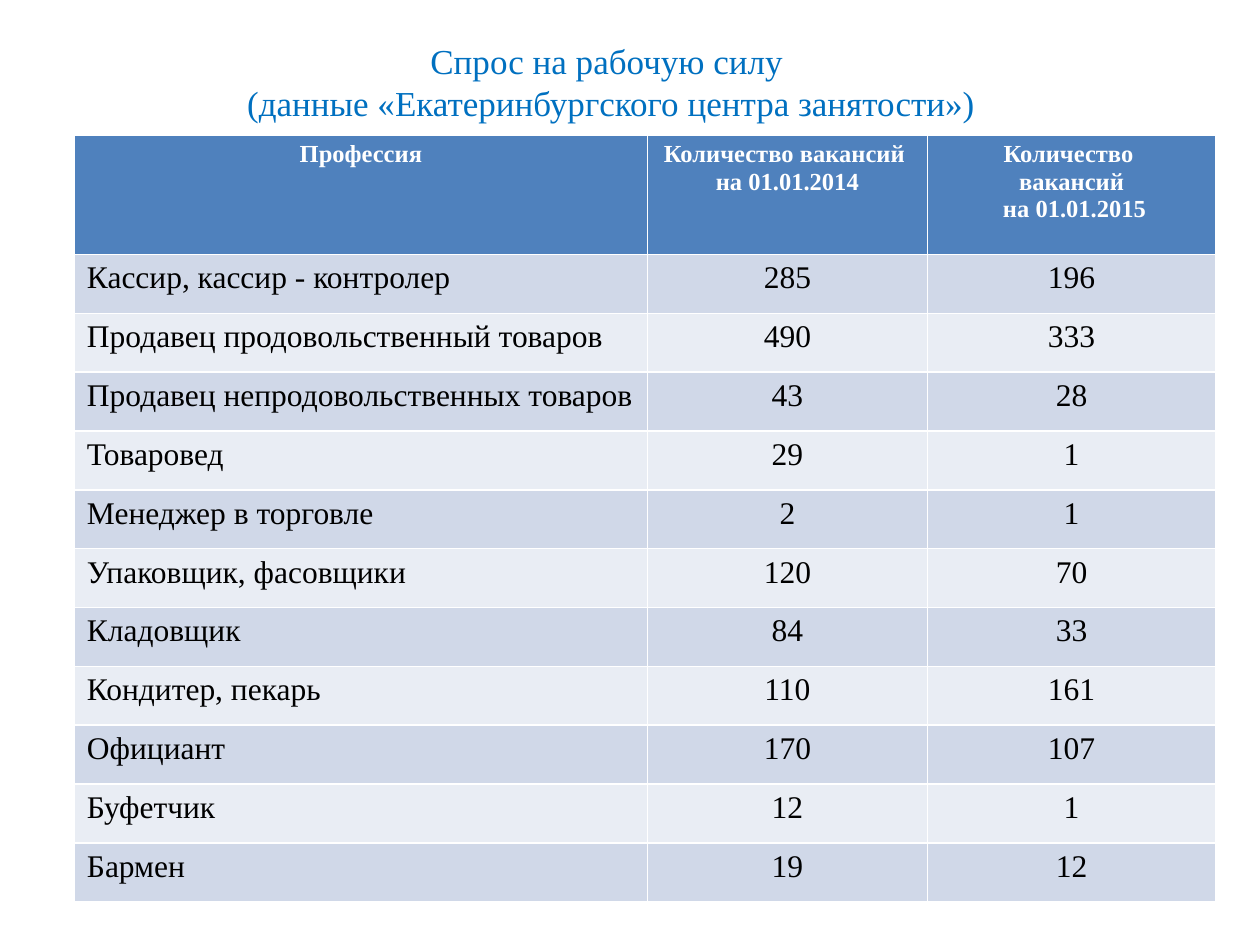
from dataclasses import dataclass

from pptx import Presentation
from pptx.dml.color import RGBColor
from pptx.enum.text import MSO_ANCHOR, PP_ALIGN
from pptx.util import Inches, Pt


@dataclass(frozen=True)
class Theme:
    face: str = "Times New Roman"
    title: str = "0070C0"
    head: str = "4F81BD"
    light: str = "FFFFFF"
    ink: str = "000000"
    bands: tuple = ("D0D8E8", "E9EDF4")
    title_size: int = 20
    head_size: int = 14
    body_size: int = 18


class Page:
    """Hold the theme and current slide; lengths are shares of the slide's size."""

    def __init__(self, deck, theme):
        self.deck, self.theme = deck, theme
        self.slide = deck.slides.add_slide(deck.slide_layouts[5])

    def box(self, left, top, width, height):
        wide, high = self.deck.slide_width, self.deck.slide_height
        return int(left * wide), int(top * high), int(width * wide), int(height * high)

    def label(self, frame, text, size, color, align, bold=False):
        frame.text = text
        for line in frame.paragraphs:
            line.alignment = align
            line.font.name = self.theme.face
            line.font.size = Pt(size)
            line.font.bold = bold
            line.font.color.rgb = RGBColor.from_string(color)

    def title(self, text, *place):
        shape = self.slide.shapes.title
        shape.left, shape.top, shape.width, shape.height = self.box(*place)
        frame = shape.text_frame
        frame.word_wrap = True
        frame.vertical_anchor = MSO_ANCHOR.MIDDLE
        self.label(frame, text, self.theme.title_size, self.theme.title, PP_ALIGN.CENTER)

    def cell(self, cell, text, row, col):
        theme = self.theme
        head = row == 0
        align = PP_ALIGN.CENTER if head or col else PP_ALIGN.LEFT
        size, color = (theme.head_size, theme.light) if head else (theme.body_size, theme.ink)
        self.label(cell.text_frame, text, size, color, align, head)
        cell.fill.solid()
        cell.fill.fore_color.rgb = RGBColor.from_string(
            theme.head if head else theme.bands[(row - 1) % 2])

    def table(self, rows, shares, head, *place):
        left, top, width, height = self.box(*place)
        table = self.slide.shapes.add_table(
            len(rows), len(shares), left, top, width, height).table
        for col, share in zip(table.columns, shares):
            col.width = int(width * share)
        first = int(height * head)
        for r, values in enumerate(rows):
            table.rows[r].height = (height - first) // (len(rows) - 1) if r else first
            for c, value in enumerate(values):
                self.cell(table.cell(r, c), str(value), r, c)


ROWS = [
    ("Профессия", "Количество вакансий \nна 01.01.2014", "Количество \nвакансий\n на 01.01.2015"),
    ("Кассир, кассир - контролер", 285, 196),
    ("Продавец продовольственный товаров", 490, 333),
    ("Продавец непродовольственных товаров", 43, 28),
    ("Товаровед", 29, 1),
    ("Менеджер в торговле", 2, 1),
    ("Упаковщик, фасовщики", 120, 70),
    ("Кладовщик", 84, 33),
    ("Кондитер, пекарь", 110, 161),
    ("Официант", 170, 107),
    ("Буфетчик", 12, 1),
    ("Бармен", 19, 12),
]


def main():
    deck = Presentation()
    deck.slide_width, deck.slide_height = Inches(10), Inches(7.5)
    page = Page(deck, Theme())
    page.title("Спрос на рабочую силу \v(данные «Екатеринбургского центра занятости»)",
               0.075, 0.21 / 7.5, 0.82, 0.87 / 7.5)
    page.table(ROWS, (4.55 / 9.06, 2.22 / 9.06, 2.29 / 9.06), 0.95 / 6.09,
               0.059, 1.07 / 7.5, 0.906, 6.09 / 7.5)
    deck.save("out.pptx")


if __name__ == "__main__":
    main()
